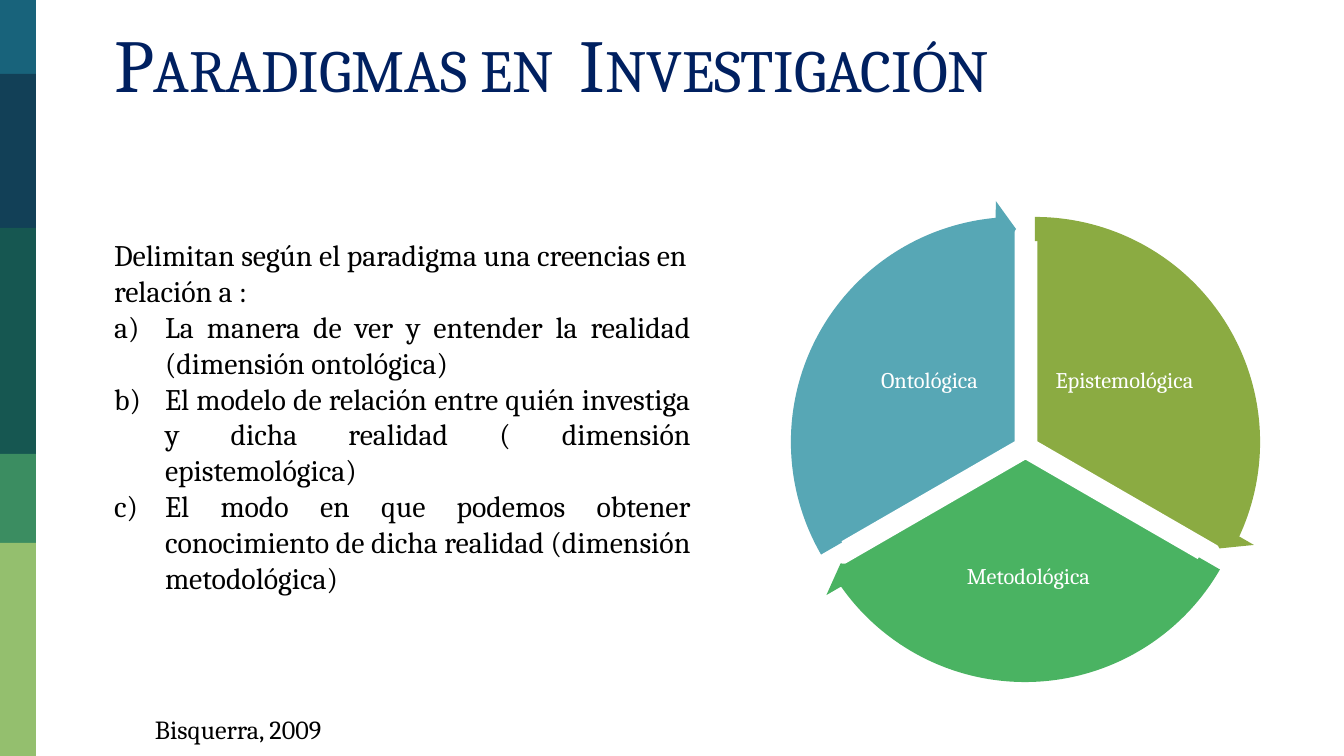
from dataclasses import dataclass

from lxml.etree import SubElement
from pptx import Presentation
from pptx.dml.color import RGBColor
from pptx.enum.shapes import MSO_SHAPE
from pptx.enum.text import MSO_ANCHOR, MSO_AUTO_SIZE, PP_ALIGN
from pptx.oxml.ns import qn
from pptx.util import Pt

PX = 914400 / 134.4  # EMU in one px


@dataclass(frozen=True)
class Theme:
    font: str = "Cambria"
    title: str = "002060"
    text: str = "000000"
    white: str = "FFFFFF"
    olive: str = "8BAB42"
    green: str = "4AB362"
    teal: str = "57A7B5"
    bars: tuple = ("18637B", "124057", "165751", "3B8D61", "94BF6E")
    title_size: int = 40
    body_size: int = 16
    source_size: int = 14
    label_size: int = 12


theme = Theme()


def add_filled(kind, box, color, adjustments=()):
    shape = slide.shapes.add_shape(kind, *[round(v * PX) for v in box])
    shape.shadow.inherit = False
    shape.fill.solid()
    shape.fill.fore_color.rgb = RGBColor.from_string(color)
    shape.line.fill.background()
    for index, value in enumerate(adjustments):
        shape.adjustments[index] = value
    return shape


def write(shape, box, lines, size, color, inset=(13, 7), paragraph_format=None, **frame_format):
    for name, value in zip(("left", "top", "width", "height"), box):
        setattr(shape, name, round(value * PX))
    frame = shape.text_frame
    margins = dict(zip(("margin_left", "margin_top", "margin_right", "margin_bottom"),
                       [round(v * PX) for v in inset * 2]))
    settings = {"word_wrap": True, "auto_size": MSO_AUTO_SIZE.NONE,
                "vertical_anchor": MSO_ANCHOR.TOP} | margins | frame_format
    for name, value in settings.items():
        setattr(frame, name, value)
    frame.text = "\n".join(lines)
    for paragraph in frame.paragraphs:
        for name, value in (paragraph_format or {}).items():
            setattr(paragraph, name, value)
        font = paragraph.runs[0].font
        for name, value in {"name": theme.font, "size": Pt(size)}.items():
            setattr(font, name, value)
        font.color.rgb = RGBColor.from_string(color)
    return frame.paragraphs


presentation = Presentation()
presentation.slide_width = round(1344 * PX)
presentation.slide_height = round(756 * PX)
slide = presentation.slides.add_slide(presentation.slide_layouts[1])

# Side colour bars
bar_spans = [(0, 78), (74, 230), (228, 454), (454, 543), (543, 756)]
for (top, bottom), color in zip(bar_spans, theme.bars):
    add_filled(MSO_SHAPE.RECTANGLE, (0, top, 36, bottom - top), color)

# Title in small capitals
title = write(slide.shapes.title, (101, 5, 953, 77), ["Paradigmas en  Investigación"],
              theme.title_size, theme.title, inset=(13, 13),
              paragraph_format={"alignment": PP_ALIGN.LEFT, "space_before": Pt(6)})
title[0].runs[0].font._element.set("cap", "small")

# Introduction and lettered list
body = write(slide.placeholders[1], (101, 230, 603, 375), [
    "Delimitan según el paradigma una creencias en relación a :",
    "La manera de ver y entender la realidad (dimensión ontológica)",
    "El modelo de relación entre quién investiga y dicha realidad ( dimensión epistemológica)",
    "El modo en que podemos obtener conocimiento de dicha realidad (dimensión metodológica)",
], theme.body_size, theme.text, paragraph_format={"space_before": Pt(0)})
for index, paragraph in enumerate(body):
    indent = round(51 * PX) if index else 0
    properties = paragraph._p.get_or_add_pPr()
    properties.set("marL", str(indent))
    properties.set("indent", str(-indent))
    if index:
        paragraph.alignment = PP_ALIGN.JUSTIFY
        SubElement(properties, qn("a:buAutoNum"), type="alphaLcParenR")
    else:
        paragraph.alignment = PP_ALIGN.LEFT
        SubElement(properties, qn("a:buNone"))

# Cycle: label, colour, sector corner, sector angles, label box, arrow angles
sectors = [
    ("Epistemológica", theme.olive, (820, 227), (162, 18), (1047, 317, 155, 128), (14.72, 161.99)),
    ("Metodológica", theme.green, (810, 242), (18, 90), (913, 521, 231, 113), (86.72, 18)),
    ("Ontológica", theme.teal, (801, 227), (90, 162), (852, 317, 155, 128), (158.73, 90)),
]
PIE_SIZE, ARROW_SIZE, ARROW_OFFSET = 431, 484, 27
for label, color, corner, angles, label_box, _ in sectors:
    pie = add_filled(MSO_SHAPE.PIE, (*corner, PIE_SIZE, PIE_SIZE), color, angles)
    pie.line.color.rgb = RGBColor.from_string(theme.white)
    pie.line.width = Pt(2)
    write(slide.shapes.add_textbox(0, 0, 0, 0), label_box, [label], theme.label_size, theme.white,
          inset=(3, 3), vertical_anchor=MSO_ANCHOR.MIDDLE,
          paragraph_format={"alignment": PP_ALIGN.CENTER, "line_spacing": 0.9})

# Arrows around the sectors
for _, color, (left, top), _, _, (end, start) in sectors:
    add_filled(MSO_SHAPE.CIRCULAR_ARROW,
               (left - ARROW_OFFSET, top - ARROW_OFFSET, ARROW_SIZE, ARROW_SIZE),
               color, (0.05, 3.28, end, start, 0.06))

# Source
write(slide.shapes.add_textbox(0, 0, 0, 0), (142, 706, 456, 46), ["Bisquerra, 2009"],
      theme.source_size, theme.text)

presentation.save("out.pptx")
